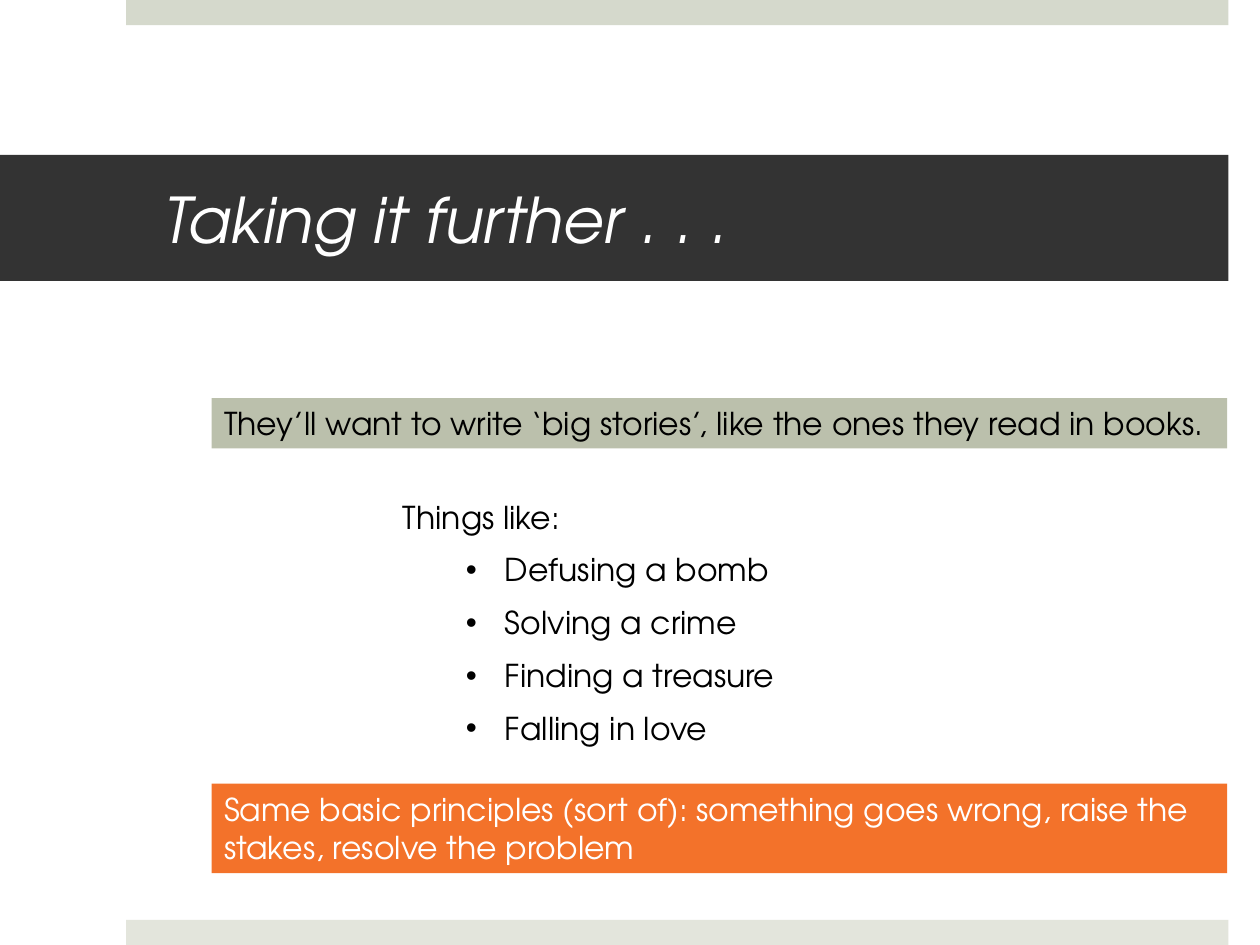
from dataclasses import dataclass

from lxml import etree
from pptx import Presentation
from pptx import util as u
from pptx.dml.color import RGBColor
from pptx.enum import shapes, text
from pptx.oxml import ns

FONT = "TeX Gyre Adventor"
BLACK, WHITE = "000000", "FFFFFF"


@dataclass
class Bar:
    left: float
    top: float
    width: float
    height: float
    fill: str
    words: str = ""
    ink: str = BLACK
    size: int = 18
    slant: bool = False
    inset: tuple = (0.1, 0.1)
    anchor: text.MSO_ANCHOR = text.MSO_ANCHOR.TOP


BARS = [
    # Edge strips
    Bar(1, 0, 8.75, 0.2, "D5D9CC"),
    Bar(1, 7.3, 8.75, 0.2, "E3E5DC"),
    # Title band
    Bar(0, 1.23, 9.75, 1, "333333", "Taking it further . . .", WHITE, 36,
        True, (1.3, 0.3), text.MSO_ANCHOR.MIDDLE),
    # Statements
    Bar(1.68, 3.16, 8.06, 0.4, "BBC0AC",
        "They’ll want to write ‘big stories’, like the ones they read in books."),
    Bar(1.68, 6.22, 8.06, 0.71, "F3722A",
        "Same basic principles (sort of): something goes wrong, "
        "raise the stakes, resolve the problem", WHITE),
]
IDEAS = ["Defusing a bomb", "Solving a crime", "Finding a treasure",
         "Falling in love"]


def color(code: str) -> RGBColor:
    return RGBColor.from_string(code)


def style(para, ink: str = BLACK, size: int = 18, slant: bool = False) -> None:
    para.alignment = text.PP_ALIGN.LEFT
    for run in para.runs:
        font = run.font
        font.name, font.size, font.italic = FONT, u.Pt(size), slant
        font.color.rgb = color(ink)


def draw_bar(slide, bar: Bar) -> None:
    box = (bar.left, bar.top, bar.width, bar.height)
    shape = slide.shapes.add_shape(
        shapes.MSO_SHAPE.RECTANGLE, *map(u.Inches, box))
    shape.shadow.inherit = False
    shape.fill.solid()
    shape.fill.fore_color.rgb = color(bar.fill)
    shape.line.fill.background()
    if not bar.words:
        return
    frame = shape.text_frame
    frame.word_wrap = True
    frame.vertical_anchor = bar.anchor
    frame.margin_left, frame.margin_right = map(u.Inches, bar.inset)
    frame.text = bar.words
    style(frame.paragraphs[0], bar.ink, bar.size, bar.slant)


def add_dot(para) -> None:
    para.level = 1
    props = para._p.get_or_add_pPr()
    props.set("marL", str(u.Inches(0.81)))
    props.set("indent", str(u.Inches(-0.31)))
    tint = etree.SubElement(props, ns.qn("a:buClr"))
    etree.SubElement(tint, ns.qn("a:srgbClr"), val=BLACK)
    etree.SubElement(props, ns.qn("a:buFont"), typeface="Arial")
    etree.SubElement(props, ns.qn("a:buChar"), char="•")


def draw_list(slide, head: str, items: list[str]) -> None:
    box = slide.shapes.add_textbox(*map(u.Inches, (3.1, 3.78, 6.44, 2.52)))
    frame = box.text_frame
    frame.word_wrap = True
    frame.text = "\n".join([head, *items])
    for para in frame.paragraphs:
        para.line_spacing = 1.4
        style(para)
    for para in frame.paragraphs[1:]:
        add_dot(para)


def main() -> None:
    deck = Presentation()
    deck.slide_width, deck.slide_height = u.Inches(10), u.Inches(7.5)
    slide = deck.slides.add_slide(deck.slide_layouts[6])
    # Bars, with the list beneath the last one
    for bar in BARS[:-1]:
        draw_bar(slide, bar)
    draw_list(slide, "Things like:", IDEAS)
    draw_bar(slide, BARS[-1])
    deck.save("out.pptx")


if __name__ == "__main__":
    main()
